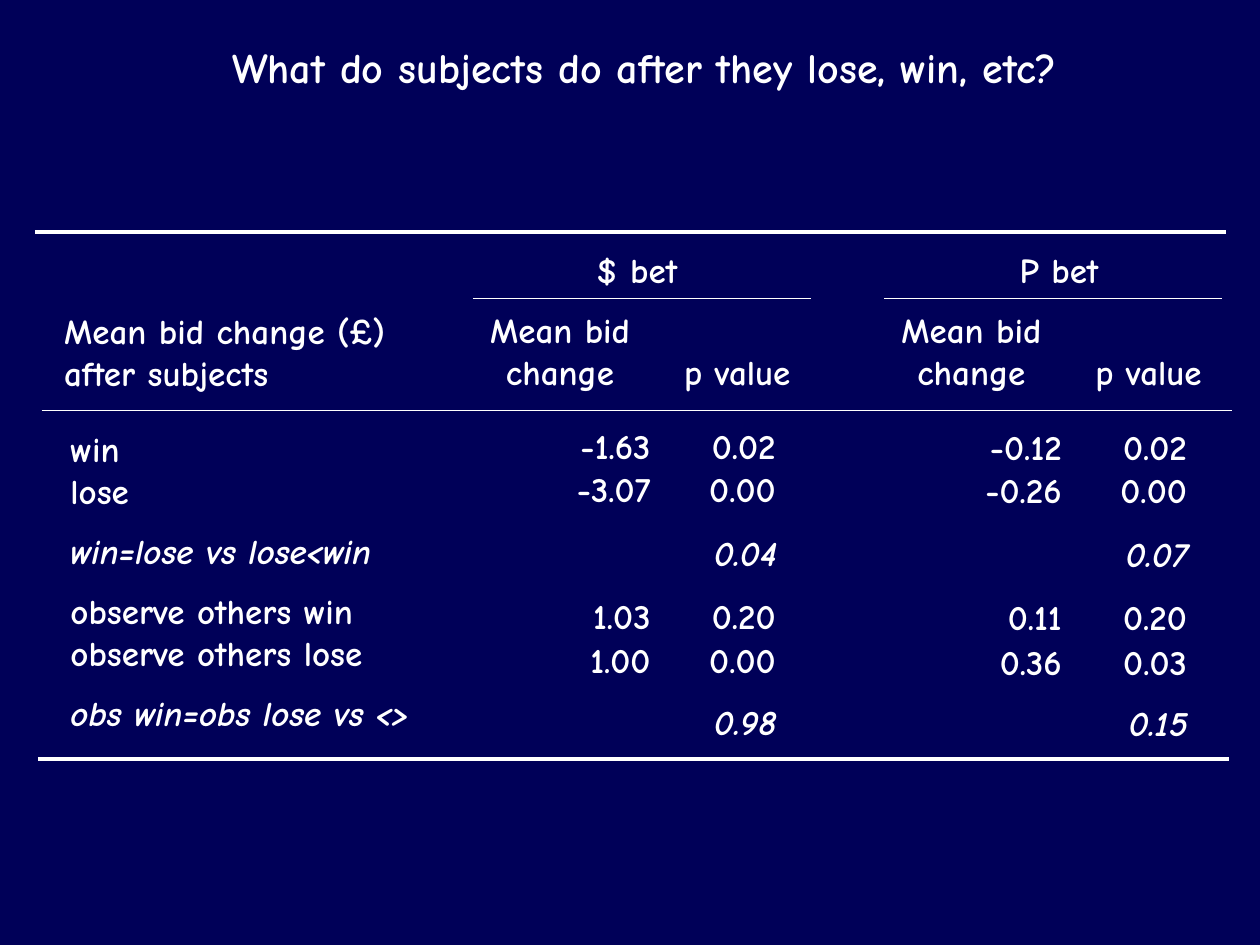
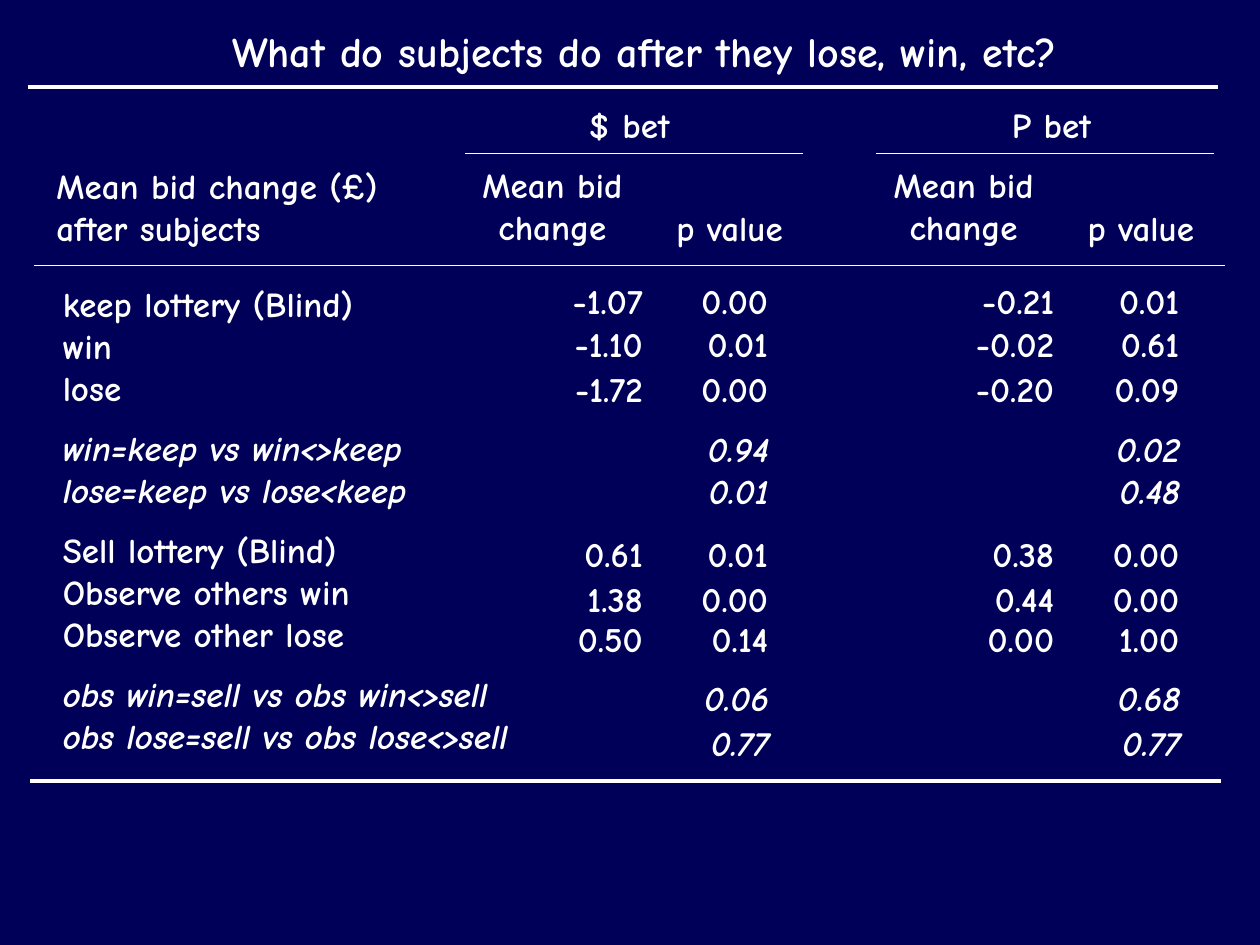
from dataclasses import dataclass

from lxml import etree
from pptx import Presentation
from pptx.dml.color import RGBColor
from pptx.enum import shapes, text
from pptx.oxml.ns import qn
from pptx.util import Pt


@dataclass(frozen=True)
class Theme:
    navy: RGBColor = RGBColor(0x00, 0x00, 0x58)
    white: RGBColor = RGBColor(0xFF, 0xFF, 0xFF)
    font: str = "Comic Neue"
    title: float = 24
    body: float = 20
    group_gap: float = 10.3
    thin: float = 0.75
    thick: float = 2.25


theme = Theme()
LEFT, CENTER, RIGHT = (text.PP_ALIGN.LEFT, text.PP_ALIGN.CENTER, text.PP_ALIGN.RIGHT)


def add_text(slide, lines, left, top, width, height=31, size=theme.body,
             align=LEFT, italic=False, tabs=()):
    """Write lines, each a string or a (string, italic, space before) tuple."""
    box = slide.shapes.add_textbox(Pt(left), Pt(top), Pt(width), Pt(height))
    frame = box.text_frame
    frame.word_wrap = True
    frame.auto_size = text.MSO_AUTO_SIZE.SHAPE_TO_FIT_TEXT
    for index, line in enumerate([lines] if isinstance(lines, str) else lines):
        words, slanted, gap = (line, italic, 0) if isinstance(line, str) else line
        paragraph = frame.paragraphs[0] if index == 0 else frame.add_paragraph()
        paragraph.alignment = align
        paragraph.space_before = Pt(gap)
        run = paragraph.add_run()
        run.text = words
        run.font.name = theme.font
        run.font.size = Pt(size)
        run.font.bold = True
        run.font.italic = slanted
        run.font.color.rgb = theme.white
        if tabs:
            stops = etree.SubElement(paragraph._p.get_or_add_pPr(), qn("a:tabLst"))
            for position in tabs:
                etree.SubElement(stops, qn("a:tab"), pos=str(Pt(position)), algn="r")


def add_rule(slide, left, top, length, weight):
    rule = slide.shapes.add_connector(shapes.MSO_CONNECTOR.STRAIGHT,
                                      Pt(left), Pt(top), Pt(left + length), Pt(top))
    rule.line.color.rgb = theme.white
    rule.line.width = Pt(weight)
    etree.SubElement(rule._element.spPr, qn("a:effectLst"))


# Row tops are measured from the top rule. A row without mean bid changes is a
# hypothesis test and is set in italics.
# Each row: top, label, ($ mean, $ p value), (P mean, P p value)
experiments = [
    dict(title_top=20.2, left=20.2, top=132.5, bottom=301, p_drop=0.7, rows=[
        (106.6, "win", ("-1.63", "0.02"), ("-0.12", "0.02")),
        (131, "lose", ("-3.07", "0.00"), ("-0.26", "0.00")),
        (167.8, "win=lose vs lose<win", ("", "0.04"), ("", "0.07")),
        (203.8, "observe others win", ("1.03", "0.20"), ("0.11", "0.20")),
        (229, "observe others lose", ("1.00", "0.00"), ("0.36", "0.03")),
        (264.2, "obs win=obs lose vs <>", ("", "0.98"), ("", "0.15")),
    ]),
    dict(title_top=10.8, left=15.8, top=49.7, bottom=396.7, p_drop=0, rows=[
        (106.6, "keep lottery (Blind)", ("-1.07", "0.00"), ("-0.21", "0.01")),
        (131, "win", ("-1.10", "0.01"), ("-0.02", "0.61")),
        (157, "lose", ("-1.72", "0.00"), ("-0.20", "0.09")),
        (190.8, "win=keep vs win<>keep", ("", "0.94"), ("", "0.02")),
        (215.2, "lose=keep vs lose<keep", ("", "0.01"), ("", "0.48")),
        (251, "Sell lottery (Blind)", ("0.61", "0.01"), ("0.38", "0.00")),
        (276.5, "Observe others win", ("1.38", "0.00"), ("0.44", "0.00")),
        (299.5, "Observe other lose", ("0.50", "0.14"), ("0.00", "1.00")),
        (333.4, "obs win=sell vs obs win<>sell", ("", "0.06"), ("", "0.68")),
        (359.2, "obs lose=sell vs obs lose<>sell", ("", "0.77"), ("", "0.77")),
    ]),
]
# Each bet: heading, heading left, shift of its columns
bets = [("$ bet", 281.5, 0), ("P bet", 522.7, 235)]
table_width = 680.4
values_width, p_value_width = 184.3, 85

deck = Presentation()
deck.slide_width, deck.slide_height = Pt(720), Pt(540)

for experiment in experiments:
    slide = deck.slides.add_slide(deck.slide_layouts[6])
    slide.background.fill.solid()
    slide.background.fill.fore_color.rgb = theme.navy
    left, top, rows = experiment["left"], experiment["top"], experiment["rows"]

    add_text(slide, "What do subjects do after they lose, win, etc?", 64.8,
             experiment["title_top"], 607, 36, size=theme.title, align=CENTER)
    add_text(slide, "Mean bid change (£) after subjects", left + 9.4, top + 41, 232.6, 55.4)

    labels = []
    was_test = False
    for _, label, (mean, _), _ in rows:
        is_test = not mean
        labels.append((label, is_test, theme.group_gap if is_test != was_test else 0))
        was_test = is_test
    add_text(slide, labels, left + 13, top + 108, 319.7, 187)

    for bet, (heading, heading_left, shift) in enumerate(bets):
        column = left + shift
        add_text(slide, heading, left + heading_left, top + 6, 124.6, align=CENTER)
        add_rule(slide, column + 250, top + 38.2, 193, theme.thin)
        add_text(slide, "Mean bid change", column + 243.4, top + 40.3, 113, 55.4, align=CENTER)
        add_text(slide, "p value", column + 358.6, top + 64.5, p_value_width, align=CENTER)

        values_left = column + 246.5
        for row_top, _, *results in rows:
            mean, p_value = results[bet]
            row_y = top + row_top + bet * experiment["p_drop"]
            if mean:
                add_text(slide, f"\t{mean}\t{p_value}", values_left, row_y, values_width,
                         tabs=(98, 169.5))
            else:
                add_text(slide, p_value, values_left + values_width - p_value_width, row_y,
                         p_value_width, align=RIGHT, italic=True)

    add_rule(slide, left, top, table_width, theme.thick)
    add_rule(slide, left + 3.6, top + 102.2, table_width, theme.thin)
    add_rule(slide, left + 1.4, top + experiment["bottom"], table_width, theme.thick)

deck.save("out.pptx")
